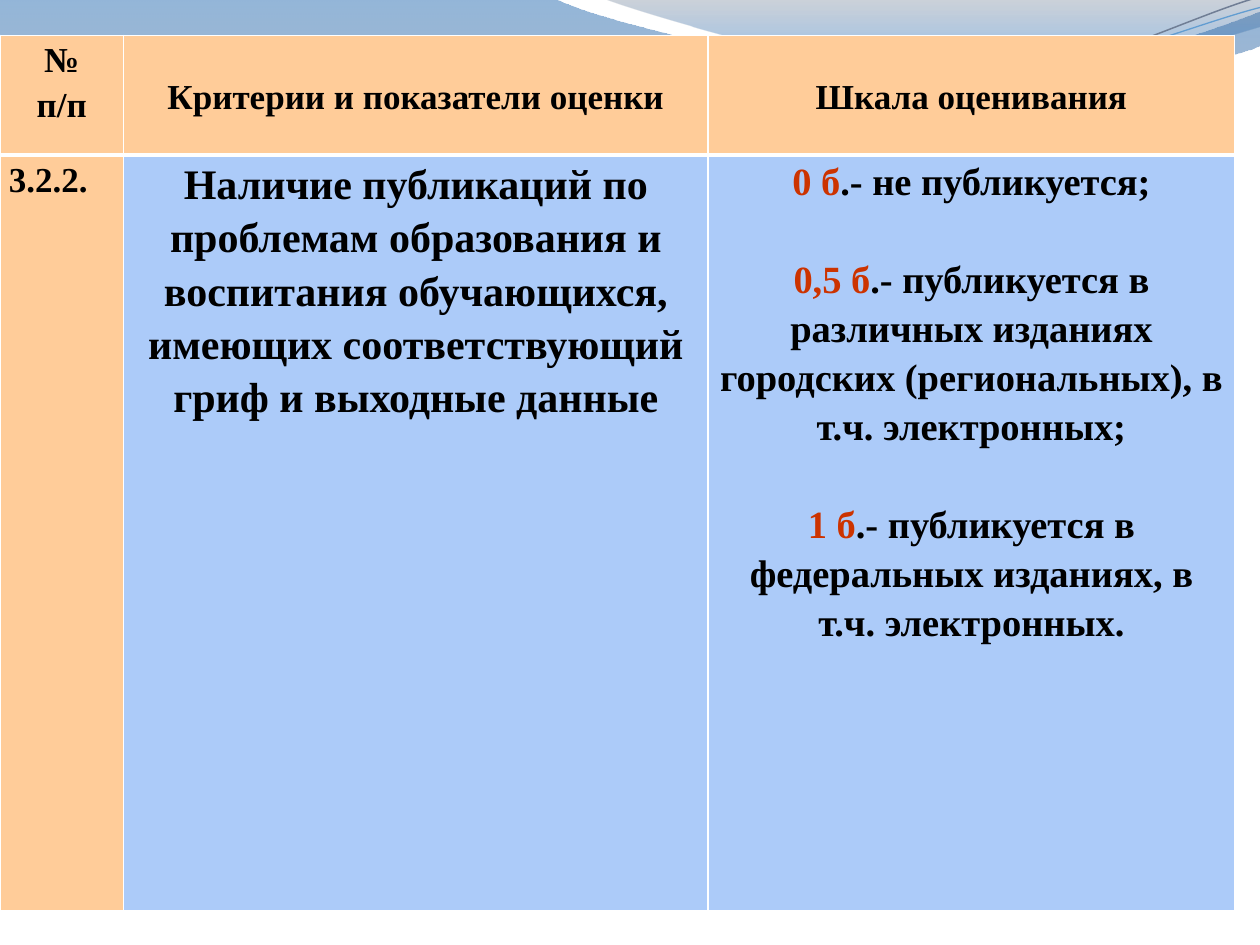
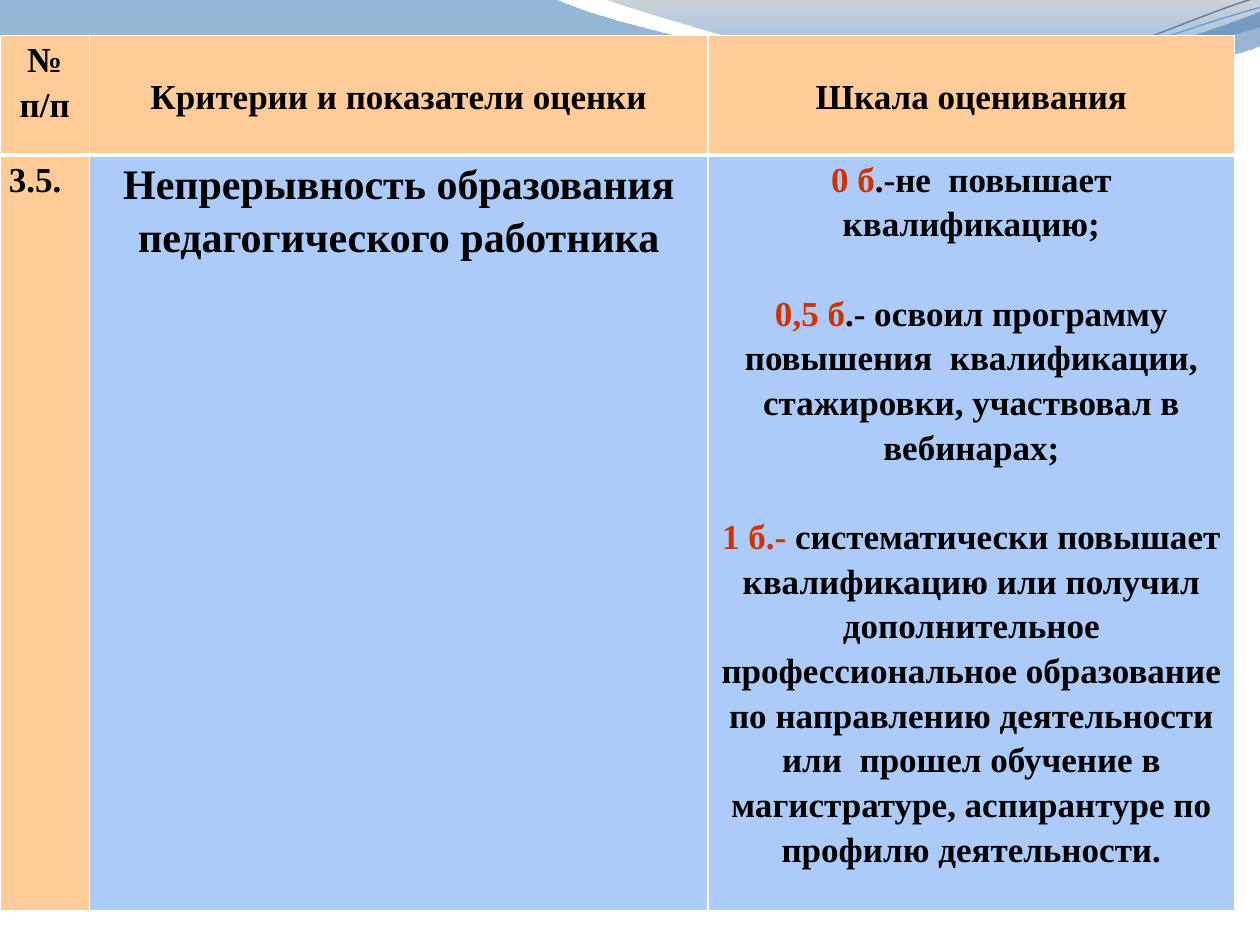
from dataclasses import dataclass
from math import cos, radians, sin
from lxml.etree import SubElement
from pptx import Presentation
from pptx.dml.color import RGBColor as RGB
from pptx.enum.text import MSO_ANCHOR as Anchor, PP_ALIGN as Align
from pptx.oxml import parse_xml
from pptx.oxml.ns import nsdecls, qn
from pptx.util import Inches, Pt


@dataclass(frozen=True)
class Theme:
    font: str = "Times New Roman"
    ink: str = "000000"
    score: str = "CC3300"
    peach: str = "FFCC99"
    sky: str = "ACCBF9"
    edge: str = "FFFFFF"
    small: int = 20
    mid: int = 22
    large: int = 24
    spacing: float = 1.15
    gap: float = 1.28
    thin: int = 1
    thick: int = 3


BANDS = [
    ((0, -0.01), [(4.4, -0.01), (4.76, 0.17, 6.64, 0.63, 7.58, 0.63),
                  (8.53, 0.63, 9.58, 0.26, 10, 0.09), (10.01, 0.36),
                  (9.83, 0.44, 8.7, 0.76, 7.46, 0.75),
                  (6.22, 0.75, 3.82, 0.28, 2.57, 0.34),
                  (1.29, 0.35, 0.46, 0.83, -0.01, 1.13), (0, -0.01)],
     [(0, "125EAA", 45), (1, "697FA4", 55)]),
    ((4.79, -0.01), [(5.09, 0.11, 6.82, 0.62, 7.69, 0.65),
                     (8.56, 0.69, 9.61, 0.32, 10, 0.21), (10, 0), (4.79, -0.01)],
     [(0, "596982", 30), (0.8, "0670DA", 45)]),
]
LINES = [
    ((0, 1.11), [(0.48, 0.93, 1.58, 0.57, 2.77, 0.52),
                 (3.95, 0.47, 5.93, 0.89, 7.13, 0.8),
                 (8.33, 0.71, 9.38, 0.15, 9.98, -0.02)], (4.99, 0.58), "707E95", 0.85),
    ((0, 1.04), [(0.47, 0.96, 1.64, 0.61, 2.83, 0.56),
                 (4.03, 0.51, 5.97, 0.83, 7.17, 0.75),
                 (8.36, 0.67, 9.41, 0.21, 10, 0.06)], (5, 0.59), "629DD1", 0.75),
]
TILT = 2.7
HEADS = ["Критерии и показатели оценки", "Шкала оценивания"]


def level(point, pivot):
    """Return the point turned about the pivot so that the tilt is undone."""
    turn = radians(TILT)
    x, y = point[0] - pivot[0], point[1] - pivot[1]
    return (pivot[0] + x * cos(turn) - y * sin(turn),
            pivot[1] + x * sin(turn) + y * cos(turn))


class Deck:
    """Hold the style and the current slide, and draw each kind of element."""

    def __init__(self, theme):
        self.theme = theme
        self.show = Presentation()
        self.show.slide_width, self.show.slide_height = Inches(10), Inches(7.5)
        self.slide = None

    def page(self):
        self.slide = self.show.slides.add_slide(self.show.slide_layouts[6])
        for band in BANDS:
            self.band(*band)
        for line in LINES:
            self.curve(*line)

    def form(self, start, steps, close, pivot=None):
        points = [start]
        for step in steps:
            points += zip(step[::2], step[1::2])
        if pivot:
            points = [level(point, pivot) for point in points]
        points = [(Inches(x), Inches(y)) for x, y in points]
        pen = self.slide.shapes.build_freeform(*points[0])
        pen.add_line_segments(points[1:], close=close)
        shape = pen.convert_to_shape()
        shape.shadow.inherit = False
        moves = shape.element.iter(qn("a:lnTo"))
        for step, move in zip(steps, list(moves)[:0] or self.groups(shape, steps)):
            if len(step) == 6:
                bend = parse_xml(f'<a:cubicBezTo {nsdecls("a")}/>')
                move[0].addprevious(bend)
                for part in move:
                    bend.append(part[0])
                    part.getparent().remove(part)
        return shape

    def groups(self, shape, steps):
        moves = iter(list(shape.element.iter(qn("a:lnTo"))))
        return [[next(moves) for _ in step[::2]] for step in steps]

    def band(self, start, steps, stops):
        shape = self.form(start, steps, True)
        shape.line.fill.background()
        shape.fill.gradient()
        shape.fill.gradient_angle = 270
        for stop, (place, color, _) in zip(shape.fill.gradient_stops, stops):
            stop.position = place
            stop.color.rgb = RGB.from_string(color)
        tints = shape.element.spPr.iter(qn("a:srgbClr"))
        for tint, (_, _, alpha) in zip(tints, stops):
            SubElement(tint, qn("a:alpha")).set("val", str(alpha * 1000))

    def curve(self, start, steps, pivot, color, width):
        shape = self.form(start, steps, False, pivot)
        shape.rotation = -TILT
        shape.fill.background()
        shape.line.color.rgb = RGB.from_string(color)
        shape.line.width = Pt(width)

    def text(self, cell, paras, size, align=Align.CENTER, gap=0):
        frame = cell.text_frame
        for i, runs in enumerate(paras):
            para = frame.add_paragraph() if i else frame.paragraphs[0]
            para.alignment = align
            para.line_spacing = self.theme.spacing
            if i and gap:
                para.space_before = Pt(gap)
            for words, color in runs:
                run = para.add_run()
                run.text = words
                run.font.name = self.theme.font
                run.font.size = Pt(size)
                run.font.bold = True
                run.font.color.rgb = RGB.from_string(color)

    def cell(self, cell, fill, top, bottom):
        cell.margin_left = cell.margin_right = Inches(0.07)
        cell.margin_top = cell.margin_bottom = 0
        cell.fill.solid()
        cell.fill.fore_color.rgb = RGB.from_string(fill)
        props = cell._tc.get_or_add_tcPr()
        thin = self.theme.thin
        for i, (side, width) in enumerate(zip("LRTB", (thin, thin, top, bottom))):
            props.insert(i, parse_xml(
                f'<a:ln{side} {nsdecls("a")} w="{Pt(width)}"><a:solidFill>'
                f'<a:srgbClr val="{self.theme.edge}"/></a:solidFill></a:ln{side}>'))

    def table(self, widths, number, topic, scale, size):
        look = self.theme
        heights = [0.95, 6]
        grid = self.slide.shapes.add_table(
            2, 3, 0, Inches(0.28), Inches(sum(widths)), Inches(sum(heights))).table
        grid.first_row = grid.horz_banding = False
        for col, width in zip(grid.columns, widths):
            col.width = Inches(width)
        for row, height in zip(grid.rows, heights):
            row.height = Inches(height)
        for i in range(3):
            self.cell(grid.cell(0, i), look.peach, look.thin, look.thick)
            self.cell(grid.cell(1, i), look.sky if i else look.peach,
                      look.thick, look.thin)
        self.text(grid.cell(0, 0), [[("№", look.ink)], [("п/п", look.ink)]], look.small)
        for i, head in enumerate(HEADS, 1):
            grid.cell(0, i).vertical_anchor = Anchor.MIDDLE
            self.text(grid.cell(0, i), [[(head, look.ink)]], look.small)
        self.text(grid.cell(1, 0), [[(number, look.ink)]], look.small, Align.LEFT)
        self.text(grid.cell(1, 1), [[(topic, look.ink)]], look.large)
        marks = [[(mark, look.score), (note, look.ink)] for mark, note in scale]
        self.text(grid.cell(1, 2), marks, size, gap=size * look.gap)


def main():
    look = Theme()
    deck = Deck(look)

    deck.page()
    deck.table(
        [0.98, 4.64, 4.18], "3.2.2.",
        "Наличие публикаций по проблемам образования и воспитания обучающихся, "
        "имеющих соответствующий гриф и выходные данные",
        [("0 б", ".- не публикуется;"),
         ("0,5 б", ".- публикуется в различных изданиях городских "
                   "(региональных), в т.ч. электронных;"),
         ("1 б", ".- публикуется в федеральных изданиях, в т.ч. электронных.")],
        look.mid)

    deck.page()
    deck.table(
        [0.71, 4.91, 4.18], "3.5.",
        "Непрерывность образования педагогического работника",
        [("0 б", ".-не  повышает квалификацию;"),
         ("0,5 б", ".- освоил программу повышения  квалификации, стажировки, "
                   "участвовал в вебинарах;"),
         ("1 б.-", " систематически повышает квалификацию или получил "
                   "дополнительное профессиональное образование по направлению "
                   "деятельности или  прошел обучение в магистратуре, аспирантуре "
                   "по профилю деятельности.")],
        look.small)

    deck.show.save("out.pptx")


if __name__ == "__main__":
    main()
